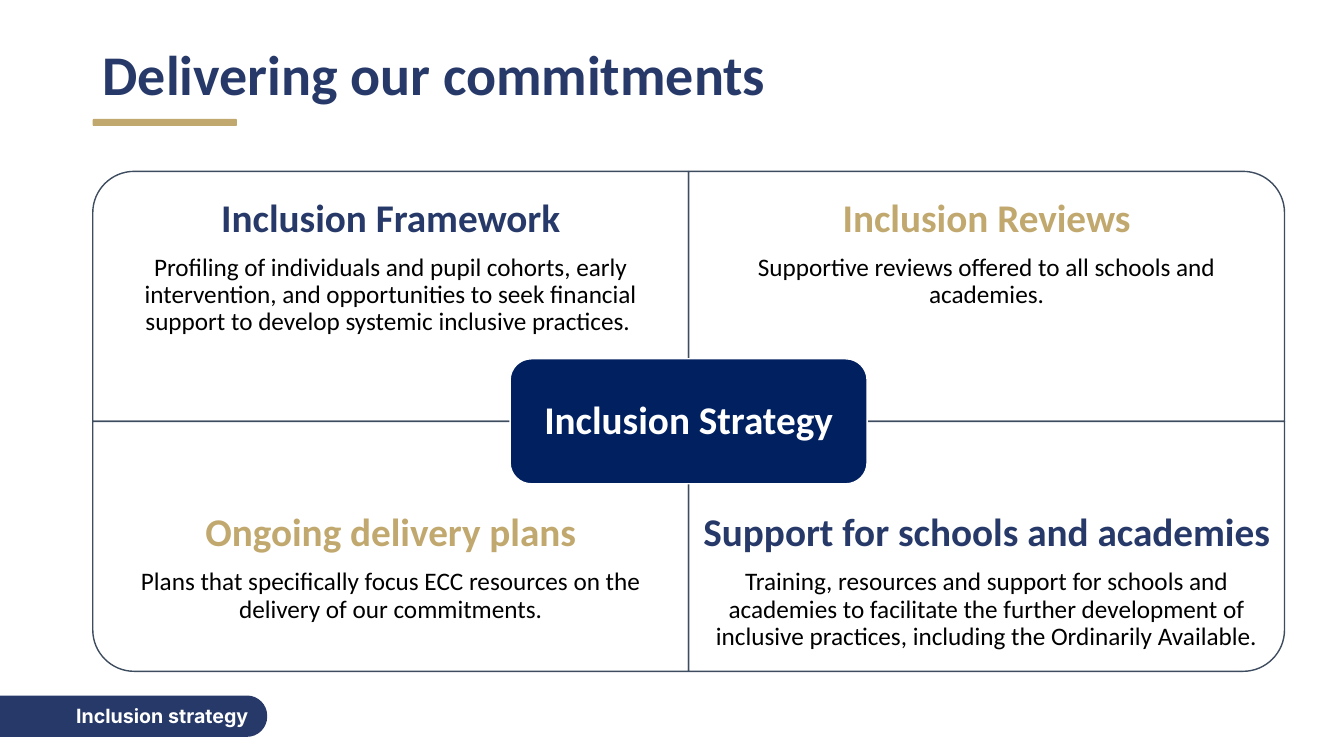
from pptx import Presentation
from pptx.dml.color import RGBColor
from pptx.enum.shapes import MSO_SHAPE
from pptx.enum.text import MSO_ANCHOR, PP_ALIGN
from pptx.oxml.ns import qn
from pptx.util import Pt

PX = 9144  # 100 px to the inch
NAVY = RGBColor(0x27, 0x39, 0x68)
GOLD = RGBColor(0xC1, 0xA8, 0x6E)
DEEP = RGBColor(0x00, 0x20, 0x60)
SLATE = RGBColor(0x3E, 0x4C, 0x60)
WHITE = RGBColor(0xFF, 0xFF, 0xFF)
BLACK = RGBColor(0x00, 0x00, 0x00)

prs = Presentation()
prs.slide_width, prs.slide_height = 1333 * PX, 750 * PX
s = prs.slides.add_slide(prs.slide_layouts[6])


def add_block(x, y, w, h, fill, line=None, radii=None):
    """Add a rounded bar, or an outline with radii from top left, clockwise."""
    if radii is None:
        sp = s.shapes.add_shape(MSO_SHAPE.ROUNDED_RECTANGLE,
                                x * PX, y * PX, w * PX, h * PX)
    else:
        points, curves = [], []
        corners = [(x, y, 0, 1), (x + w, y, -1, 0),
                   (x + w, y + h, 0, -1), (x, y + h, 1, 0)]
        for (cx, cy, dx, dy), r in zip(corners, radii):
            if r:
                # Bezier from the incoming side to the outgoing side
                curves.append(len(points))
                for a, b in ((r, 0), (r * 0.45, 0), (0, r * 0.45), (0, r)):
                    points.append((round((cx + dx * a - dy * -b) * PX),
                                   round((cy + dy * a - dx * b) * PX)))
            else:
                points.append((cx * PX, cy * PX))
        fb = s.shapes.build_freeform(*points[0])
        fb.add_line_segments(points[1:], close=True)
        sp = fb.convert_to_shape()
        # Merge each corner's three segments into one curve
        segments = list(sp.element.iter(qn("a:lnTo")))
        for i in curves:
            curve, *rest = segments[i:i + 3]
            curve.tag = qn("a:cubicBezTo")
            for segment in rest:
                curve.append(segment[0])
                segment.getparent().remove(segment)
    sp.shadow.inherit = False
    sp.fill.solid()
    sp.fill.fore_color.rgb = fill
    if line is None:
        sp.line.fill.background()
    else:
        sp.line.color.rgb = line
        sp.line.width = Pt(1)
    return sp


def write(sp, paragraphs, insets, anchor=MSO_ANCHOR.TOP, align=PP_ALIGN.CENTER,
          spacing=0.9, font="Calibri"):
    """Fill a shape with (text, size, bold, colour) paragraphs."""
    tf = sp.text_frame
    tf.word_wrap = True
    tf.vertical_anchor = anchor
    for side, inset in zip(("left", "top", "right", "bottom"), insets):
        setattr(tf, f"margin_{side}", inset * PX)
    for i, (text, size, bold, color) in enumerate(paragraphs):
        p = tf.add_paragraph() if i else tf.paragraphs[0]
        p.alignment = align
        p.line_spacing = spacing
        if i < len(paragraphs) - 1:
            p.space_after = Pt(size * 0.35)
        r = p.add_run()
        r.text = text
        for name, value in dict(name=font, size=Pt(size), bold=bold).items():
            setattr(r.font, name, value)
        r.font.color.rgb = color


# Title
title = s.shapes.add_textbox(92 * PX, 28 * PX, 1150 * PX, 98 * PX)
write(title, [("Delivering our commitments", 40, True, NAVY)], (10, 5, 10, 5),
      anchor=MSO_ANCHOR.MIDDLE, align=PP_ALIGN.LEFT)

# Four panels, each rounded at its outer corner
LEFT, TOP, PANEL_W, PANEL_H, RADIUS = 92, 170, 591, 248, 41
panels = [
    (0, 0, 0, NAVY, "Inclusion Framework",
     "Profiling of individuals and pupil cohorts, early intervention, and "
     "opportunities to seek financial support to develop systemic inclusive "
     "practices. "),
    (1, 0, 1, GOLD, "Inclusion Reviews",
     "Supportive reviews offered to all schools and academies."),
    (0, 1, 3, GOLD, "Ongoing delivery plans",
     "Plans that specifically focus ECC resources on the delivery of our "
     "commitments."),
    (1, 1, 2, NAVY, "Support for schools and academies",
     "Training, resources and support for schools and academies to facilitate "
     "the further development of inclusive practices, including the "
     "Ordinarily Available."),
]
for col, row, rounded, color, heading, body in panels:
    radii = [RADIUS if i == rounded else 0 for i in range(4)]
    panel = add_block(LEFT + col * PANEL_W, TOP + row * PANEL_H,
                      PANEL_W, PANEL_H, WHITE, SLATE, radii)
    write(panel, [(heading, 28, True, color), (body, 18, False, BLACK)],
          (14, 91, 14, 14) if row else (19, 27, 19, 78))

# Central strategy box
center = add_block(506, 356, 354, 124, DEEP, WHITE, [21] * 4)
write(center, [("Inclusion Strategy", 28, True, WHITE)], (13, 13, 13, 13),
      anchor=MSO_ANCHOR.MIDDLE)

# Footer tab
add_block(0, 690, 265, 41, NAVY, radii=(0, 20, 20, 0))
label = s.shapes.add_textbox(19 * PX, 698 * PX, 284 * PX, 24 * PX)
write(label, [("Inclusion strategy", 14, True, WHITE)], (0, 0, 0, 0),
      spacing=1.0, font="Inter")

# Title underline
add_block(92, 118, 143, 7, GOLD)

prs.save("out.pptx")
